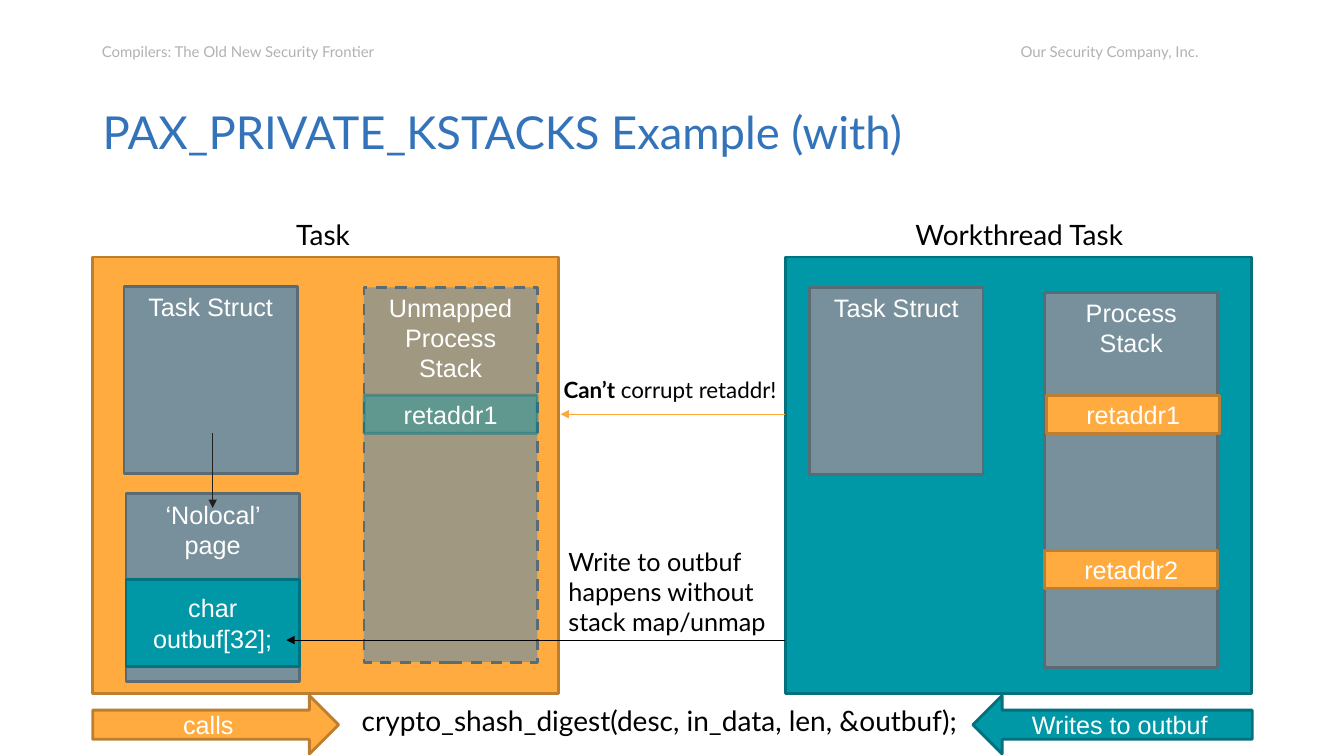
from lxml import etree
from pptx import Presentation
from pptx.dml.color import RGBColor
from pptx.enum.dml import MSO_LINE
from pptx.enum.shapes import MSO_CONNECTOR, MSO_SHAPE
from pptx.enum.text import MSO_ANCHOR, MSO_AUTO_SIZE, PP_ALIGN
from pptx.oxml.ns import qn
from pptx.util import Inches, Pt

RECT, RIGHT, LEFT = MSO_SHAPE.RECTANGLE, MSO_SHAPE.RIGHT_ARROW, MSO_SHAPE.LEFT_ARROW
TOP, MID = MSO_ANCHOR.TOP, MSO_ANCHOR.MIDDLE
START, CENTER, END = PP_ALIGN.LEFT, PP_ALIGN.CENTER, PP_ALIGN.RIGHT
STRAIGHT, DASH = MSO_CONNECTOR.STRAIGHT, MSO_LINE.DASH

THEME = {
    "orange": ("FFAB40", "BD7F2F"), "teal": ("0097A7", "00717D"),
    "slate": ("78909C", "596B73"),
    "white": "FFFFFF", "black": "000000", "ink": "202020",
    "amber": "FEA83A", "gray": "B2B2B2", "blue": "3373BA",
    "title": 32.4, "head": 20, "body": 18, "note": 16, "small": 10.7,
    "box font": "Arial", "text font": "Lato", "edge": 2, "wire": 0.75,
}

# Grid, in percent of the slide's width (x) and height (y)
TASK, WORK, PANEL_W, PANEL_Y, PANEL_H = 6.9, 58.44, 34.66, 34, 57.73
BOX_W, STRUCT_H, STACK_H, ADDR_H, ADDR_Y = 12.9, 24.8, 49.6, 5.07, 52.27
STACK, WSTACK, PAGE = 27.08, 77.72, 9.38
FOOT, FOOT_H, HEAD_Y, HEAD_H = 92, 7.73, 28.13, 5.87

# Boxes: text, colour, place, format
BOXES = [
    ("", "orange", (TASK, PANEL_Y, PANEL_W, PANEL_H), {}),
    ("", "teal", (WORK, PANEL_Y, PANEL_W, PANEL_H), {}),
    ("Unmapped Process Stack", "slate", (STACK, 38, BOX_W, STACK_H),
     {"anchor": TOP, "alpha": 70, "dash": DASH}),
    ("Task Struct", "slate", (60.24, 38, BOX_W, STRUCT_H), {"anchor": TOP}),
    ("Process Stack", "slate", (WSTACK, 38.67, BOX_W, STACK_H), {"anchor": TOP}),
    ("retaddr2", "orange", (WSTACK, 72.8, BOX_W, ADDR_H), {}),
    ("retaddr1", "orange", (WSTACK + 0.15, ADDR_Y, BOX_W, ADDR_H), {}),
    ("Task Struct", "slate", (9.23, 37.87, BOX_W, STRUCT_H), {"anchor": TOP}),
    ("retaddr1", "teal", (STACK, ADDR_Y, BOX_W, ADDR_H),
     {"alpha": 40, "edge alpha": 40}),
    ("‘Nolocal’ page", "slate", (PAGE, 65.33, BOX_W, STRUCT_H), {"anchor": TOP}),
    ("char outbuf[32];", "teal", (PAGE, 76.67, BOX_W, 11.47), {}),
    ("calls", "orange", (TASK, FOOT, 18.3, FOOT_H), {"kind": RIGHT}),
    ("Writes to outbuf", "teal", (72.39, FOOT, 20.78, FOOT_H), {"kind": LEFT}),
]

# Arrows: start, end, colour
ARROWS = [
    ((WORK, 54.8), (41.71, 54.8), "amber"),
    ((WORK, 84.67), (21.3, 84.67), "black"),
    ((15.83, 57.33), (15.83, 67.2), "ink"),
]

# Labels: runs of (text, bold), place, size, colour, format
SMALL = {"anchor": MID, "inset": 0.13, "space": 1.15, "wrap": True}
LABELS = [
    ([("Our Security Company, Inc.", False)], (72.99, 3.47, 17.18, 6.4),
     "small", "gray", {**SMALL, "align": END}),
    ([("Compilers: The Old New Security Frontier", False)],
     (6.6, 3.47, 22.51, 6.4), "small", "gray", SMALL),
    ([("PAX_PRIVATE_KSTACKS Example (with)", False)],
     (TASK, 14.13, 86.27, 6.4), "title", "blue", {"anchor": MID, "wrap": True}),
    ([("Task", False)], (21.3, HEAD_Y, 5.78, HEAD_H), "head", "black", {"grow": True}),
    ([("Workthread Task", False)], (67.37, HEAD_Y, 17.55, HEAD_H),
     "head", "black", {"grow": True}),
    ([("Can’t", True), (" corrupt retaddr!", False)],
     (41.19, 49.07, 17.63, 4.93), "note", "black", {"grow": True}),
    ([("Write to outbuf happens without stack map/unmap", False)],
     (41.56, 71.6, 16.65, 13.47), "body", "black", {"grow": True, "wrap": True}),
    ([("crypto_shash_digest(desc, in_data, len, &outbuf);", False)],
     (26.18, 92.4, 46.21, HEAD_H), "head", "black", {"grow": True}),
]

deck = Presentation()
deck.slide_width, deck.slide_height = Inches(13.33), Inches(7.5)
slide = deck.slides.add_slide(deck.slide_layouts[6])


def place(*shares):
    sides = (deck.slide_width, deck.slide_height) * 2
    return [round(side * share / 100) for side, share in zip(sides, shares)]


def rgb(name):
    return RGBColor.from_string(THEME.get(name, name))


def fade(fill, alpha):
    color = fill._xPr.find(qn("a:solidFill"))[0]
    etree.SubElement(color, qn("a:alpha"), val=str(alpha * 1000))


def write(frame, runs, size, color, font, align, space=None):
    para = frame.paragraphs[0]
    para.alignment = align
    if space:
        para.line_spacing = space
    for text, bold in runs:
        run = para.add_run()
        run.text = text
        style = {"size": Pt(THEME[size]), "name": THEME[font], "bold": bold}
        for key, value in style.items():
            setattr(run.font, key, value)
        run.font.color.rgb = rgb(color)


# Boxes and block arrows
for text, tone, spot, form in BOXES:
    box = slide.shapes.add_shape(form.get("kind", RECT), *place(*spot))
    box.shadow.inherit = False
    fill, edge = THEME[tone]
    box.fill.solid()
    box.fill.fore_color.rgb = rgb(fill)
    box.line.color.rgb = rgb(edge)
    box.line.width = Pt(THEME["edge"])
    if "alpha" in form:
        fade(box.fill, form["alpha"])
    if "edge alpha" in form:
        fade(box.line.fill, form["edge alpha"])
    if "dash" in form:
        box.line.dash_style = form["dash"]
    if text:
        box.text_frame.word_wrap = True
        box.text_frame.vertical_anchor = form.get("anchor", MID)
        write(box.text_frame, [(text, False)], "body", "white", "box font", CENTER)

# Thin arrows
for start, end, color in ARROWS:
    wire = slide.shapes.add_connector(STRAIGHT, *place(*start, *end))
    wire.line.color.rgb = rgb(color)
    wire.line.width = Pt(THEME["wire"])
    etree.SubElement(wire.line._get_or_add_ln(), qn("a:tailEnd"), type="triangle")
    etree.SubElement(wire._element.spPr, qn("a:effectLst"))

# Labels
for runs, spot, size, color, form in LABELS:
    frame = slide.shapes.add_textbox(*place(*spot)).text_frame
    frame.word_wrap = form.get("wrap", False)
    frame.vertical_anchor = form.get("anchor", TOP)
    if "grow" in form:
        frame.auto_size = MSO_AUTO_SIZE.SHAPE_TO_FIT_TEXT
    if "inset" in form:
        for side in ("left", "top", "right", "bottom"):
            setattr(frame, f"margin_{side}", Inches(form["inset"]))
    write(frame, runs, size, color, "text font", form.get("align", START),
          form.get("space"))

deck.save("out.pptx")
